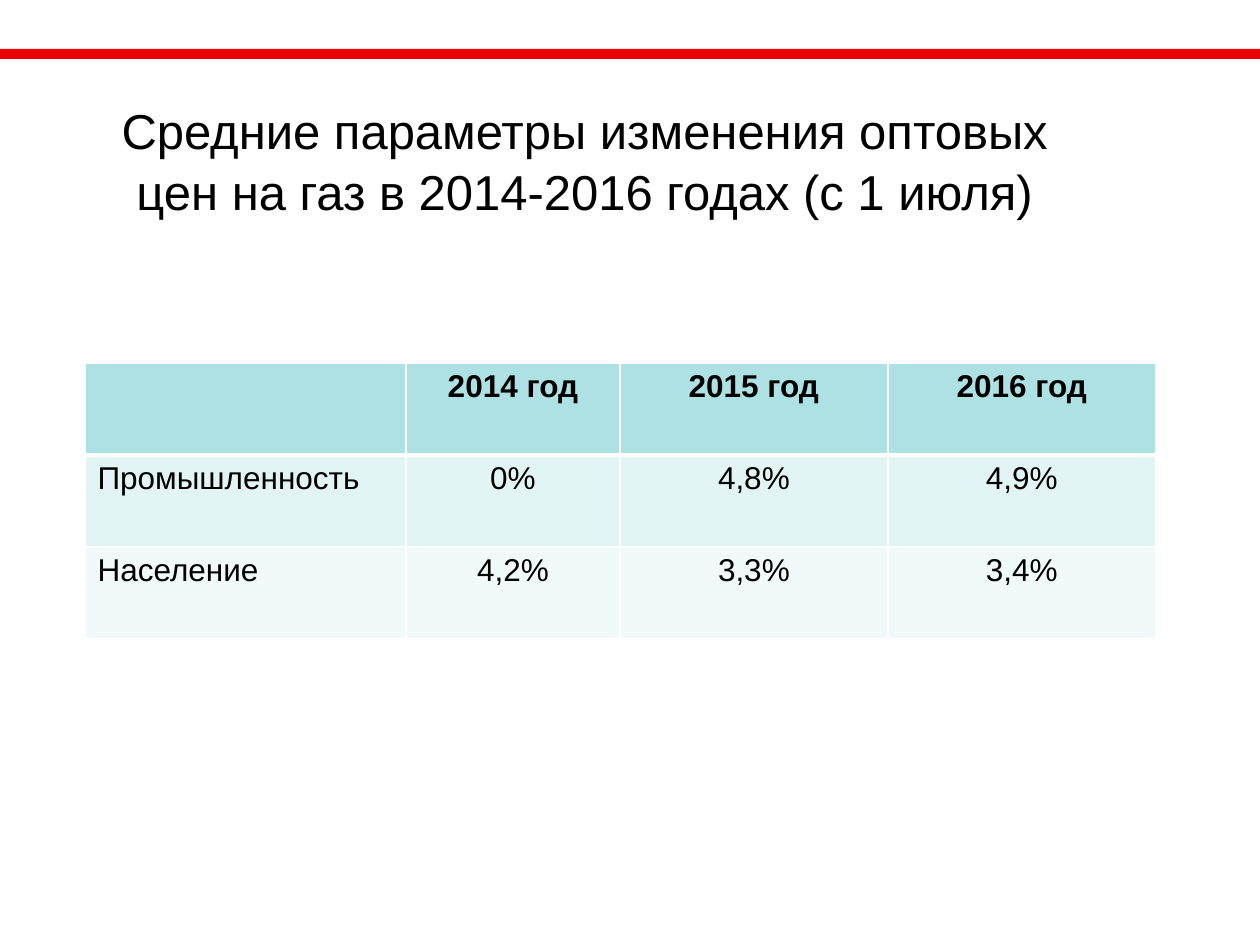
import pptx
import pptx.dml.color
import pptx.enum.shapes
import pptx.enum.text
import pptx.oxml
import pptx.oxml.ns
import pptx.util

PX = 914400 // 126
ALIGN = pptx.enum.text.PP_ALIGN
ROWS = [
    ["", "2014 год", "2015 год", "2016 год"],
    ["Промышленность", "0%", "4,8%", "4,9%"],
    ["Население", "4,2%", "3,3%", "3,4%"],
]
ROW_FILLS = ["AEE1E4", "E3F4F5", "F2F9FA"]
COLUMN_WIDTHS = [321, 214, 268, 268]
ROW_HEIGHT = 92


def px(n):
    return pptx.util.Emu(n * PX)


def rgb(color):
    return pptx.dml.color.RGBColor.from_string(color)


def write(tf, text, size, bold=False, align=ALIGN.LEFT, spacing=None):
    p = tf.paragraphs[0]
    p.alignment = align
    p.line_spacing = spacing
    p.font.size = pptx.util.Pt(size)
    if text:
        r = p.add_run()
        r.text = text
        r.font.name = "Arial"
        r.font.size = pptx.util.Pt(size)
        r.font.bold = bold
        r.font.color.rgb = rgb("000000")


def add_bar(slide, x, y, w, h, color):
    sp = slide.shapes.add_shape(
        pptx.enum.shapes.MSO_SHAPE.RECTANGLE, px(x), px(y), px(w), px(h))
    sp.shadow.inherit = False
    sp.fill.solid()
    sp.fill.fore_color.rgb = rgb(color)
    sp.line.fill.background()


def add_title(slide, x, y, w, h, text):
    tf = slide.shapes.add_textbox(px(x), px(y), px(w), px(h)).text_frame
    tf.word_wrap = True
    tf.vertical_anchor = pptx.enum.text.MSO_ANCHOR.BOTTOM
    tf.margin_left = px(18)
    tf.margin_right = px(12)
    write(tf, text, 28, align=ALIGN.CENTER, spacing=1.05)


def set_borders(cell, color, **widths):
    """Draw cell borders; widths are points keyed by side (L, R, T, B)."""
    tc_pr = cell._tc.get_or_add_tcPr()
    for i, (side, width) in enumerate(widths.items()):
        tc_pr.insert(i, pptx.oxml.parse_xml(
            f'<a:ln{side} {pptx.oxml.ns.nsdecls("a")} w="{pptx.util.Pt(width)}">'
            f'<a:solidFill><a:srgbClr val="{color}"/></a:solidFill></a:ln{side}>'))


def add_price_table(slide, x, y):
    table = slide.shapes.add_table(
        len(ROWS), len(COLUMN_WIDTHS), px(x), px(y),
        px(sum(COLUMN_WIDTHS)), px(ROW_HEIGHT * len(ROWS))).table
    for column, width in zip(table.columns, COLUMN_WIDTHS):
        column.width = px(width)
    for i, (texts, fill) in enumerate(zip(ROWS, ROW_FILLS)):
        table.rows[i].height = px(ROW_HEIGHT)
        for j, text in enumerate(texts):
            cell = table.cell(i, j)
            cell.fill.solid()
            cell.fill.fore_color.rgb = rgb(fill)
            set_borders(cell, "FFFFFF", L=1, R=1,
                        T=3 if i == 1 else 1, B=3 if i == 0 else 1)
            write(cell.text_frame, text, 18, bold=i == 0,
                  align=ALIGN.CENTER if j else ALIGN.LEFT)


def main():
    prs = pptx.Presentation()
    prs.slide_width, prs.slide_height = px(1260), px(945)
    slide = prs.slides.add_slide(prs.slide_layouts[6])
    add_bar(slide, 0, 49, 1260, 10, "EB0000")
    add_title(slide, 58, 38, 1047, 189,
              "Средние параметры изменения оптовых цен на газ "
              "в 2014-2016 годах (с 1 июля)")
    add_price_table(slide, 85, 363)
    prs.save("out.pptx")


if __name__ == "__main__":
    main()
